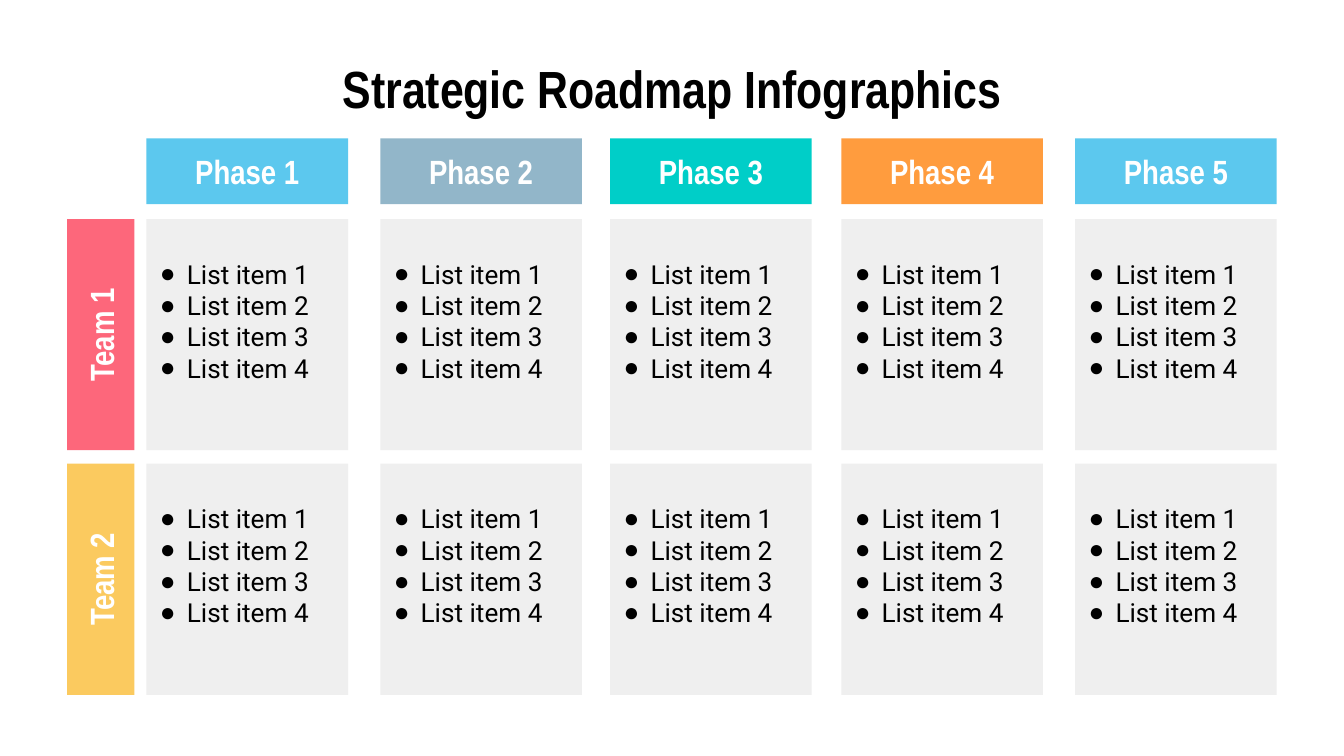
import dataclasses

import lxml.etree
import pptx
import pptx.dml.color
import pptx.enum.shapes
import pptx.enum.text
import pptx.oxml.ns
import pptx.shapes.autoshape
import pptx.shapes.group
import pptx.slide
import pptx.text.text
import pptx.util

Inches = pptx.util.Inches


@dataclasses.dataclass(frozen=True)
class Theme:
    heading_font: str = "Arial Narrow"
    body_font: str = "Roboto"
    bullet_font: str = "Arial"
    title_size: int = 28
    label_size: int = 18
    body_size: int = 14
    ink: str = "000000"
    label_ink: str = "FFFFFF"
    panel: str = "EFEFEF"
    sky: str = "5CC8EE"
    steel: str = "92B6C9"
    teal: str = "00CEC8"
    orange: str = "FF9C3E"
    pink: str = "FD677B"
    yellow: str = "FBCA5F"


@dataclasses.dataclass(frozen=True)
class Phase:
    name: str
    left: float
    color: str


@dataclasses.dataclass(frozen=True)
class Team:
    name: str
    top: float
    color: str


@dataclasses.dataclass(frozen=True)
class Box:
    left: float
    top: float
    width: float
    height: float

    def lengths(self) -> list[pptx.util.Length]:
        return [Inches(v) for v in dataclasses.astuple(self)]


THEME = Theme()
PHASES = [
    Phase("Phase 1", 1.09, THEME.sky),
    Phase("Phase 2", 2.83, THEME.steel),
    Phase("Phase 3", 4.54, THEME.teal),
    Phase("Phase 4", 6.26, THEME.orange),
    Phase("Phase 5", 8, THEME.sky),
]
TEAMS = [Team("Team 1", 1.63, THEME.pink), Team("Team 2", 3.45, THEME.yellow)]
ITEMS = [f"List item {n}" for n in range(1, 5)]
SLIDE_WIDTH = 10
COLUMN_WIDTH = 1.5
ROW_HEIGHT = 1.72
HEADER_TOP, HEADER_HEIGHT = 1.03, 0.49
TEAM_LEFT, TEAM_WIDTH = 0.5, 0.5
LIST_INSET_X, LIST_INSET_Y = 0.1, 0.29
LIST_WIDTH, LIST_HEIGHT = 1.31, 1.15
BULLET_INDENT = 0.2


def rgb(color: str) -> pptx.dml.color.RGBColor:
    return pptx.dml.color.RGBColor.from_string(color)


def set_frame(tf: pptx.text.text.TextFrame, margin: float, anchor: pptx.enum.text.MSO_ANCHOR) -> None:
    inset = Inches(margin)
    formats = {
        "margin_left": inset,
        "margin_top": inset,
        "margin_right": inset,
        "margin_bottom": inset,
        "word_wrap": True,
        "auto_size": pptx.enum.text.MSO_AUTO_SIZE.NONE,
        "vertical_anchor": anchor,
    }
    for name, value in formats.items():
        setattr(tf, name, value)


def add_run(p: pptx.text.text._Paragraph, text: str, font: str, size: int, color: str, bold: bool) -> None:
    r = p.add_run()
    r.text = text
    for name, value in {"name": font, "size": pptx.util.Pt(size), "bold": bold}.items():
        setattr(r.font, name, value)
    r.font.color.rgb = rgb(color)


def write_heading(tf: pptx.text.text.TextFrame, text: str, size: int, color: str) -> None:
    set_frame(tf, 0.1, pptx.enum.text.MSO_ANCHOR.MIDDLE)
    p = tf.paragraphs[0]
    p.alignment = pptx.enum.text.PP_ALIGN.CENTER
    add_run(p, text, THEME.heading_font, size, color, True)


def add_block(group: pptx.shapes.group.GroupShape, box: Box, color: str) -> pptx.shapes.autoshape.Shape:
    sp = group.shapes.add_shape(pptx.enum.shapes.MSO_SHAPE.RECTANGLE, *box.lengths())
    sp.shadow.inherit = False
    sp.fill.solid()
    sp.fill.fore_color.rgb = rgb(color)
    sp.line.fill.background()
    return sp


def add_label(
    group: pptx.shapes.group.GroupShape, box: Box, color: str, text: str, rotation: float = 0
) -> None:
    sp = add_block(group, box, color)
    sp.rotation = rotation
    write_heading(sp.text_frame, text, THEME.label_size, THEME.label_ink)


def set_bullet(p: pptx.text.text._Paragraph) -> None:
    qn = pptx.oxml.ns.qn
    pPr = p._p.get_or_add_pPr()
    indent = Inches(BULLET_INDENT)
    pPr.set("marL", str(indent))
    pPr.set("indent", str(-indent))
    color = lxml.etree.SubElement(pPr, qn("a:buClr"))
    lxml.etree.SubElement(color, qn("a:srgbClr"), val=THEME.ink)
    lxml.etree.SubElement(pPr, qn("a:buFont"), typeface=THEME.bullet_font)
    lxml.etree.SubElement(pPr, qn("a:buChar"), char="●")


def add_list(s: pptx.slide.Slide, box: Box, items: list[str]) -> None:
    tf = s.shapes.add_textbox(*box.lengths()).text_frame
    set_frame(tf, 0, pptx.enum.text.MSO_ANCHOR.TOP)
    for i, item in enumerate(items):
        p = tf.add_paragraph() if i else tf.paragraphs[0]
        set_bullet(p)
        add_run(p, item, THEME.body_font, THEME.body_size, THEME.ink, False)


def add_title(s: pptx.slide.Slide, box: Box, text: str) -> None:
    title = s.shapes.title
    for name, value in zip(("left", "top", "width", "height"), box.lengths()):
        setattr(title, name, value)
    write_heading(title.text_frame, text, THEME.title_size, THEME.ink)


def main() -> None:
    prs = pptx.Presentation()
    prs.slide_width, prs.slide_height = Inches(SLIDE_WIDTH), Inches(SLIDE_WIDTH * 9 / 16)
    s = prs.slides.add_slide(prs.slide_layouts.get_by_name("Title Only"))
    add_title(s, Box(0.5, 0.45, 9, 0.41), "Strategic Roadmap Infographics")

    panels, headers, sidebar = (s.shapes.add_group_shape() for _ in range(3))
    for phase in PHASES:
        add_label(headers, Box(phase.left, HEADER_TOP, COLUMN_WIDTH, HEADER_HEIGHT), phase.color, phase.name)
    for team in TEAMS:
        turn = (ROW_HEIGHT - TEAM_WIDTH) / 2
        add_label(
            sidebar,
            Box(TEAM_LEFT - turn, team.top + turn, ROW_HEIGHT, TEAM_WIDTH),
            team.color,
            team.name,
            270,
        )
        for phase in PHASES:
            add_block(panels, Box(phase.left, team.top, COLUMN_WIDTH, ROW_HEIGHT), THEME.panel)
            add_list(
                s,
                Box(phase.left + LIST_INSET_X, team.top + LIST_INSET_Y, LIST_WIDTH, LIST_HEIGHT),
                ITEMS,
            )
    prs.save("out.pptx")


if __name__ == "__main__":
    main()
